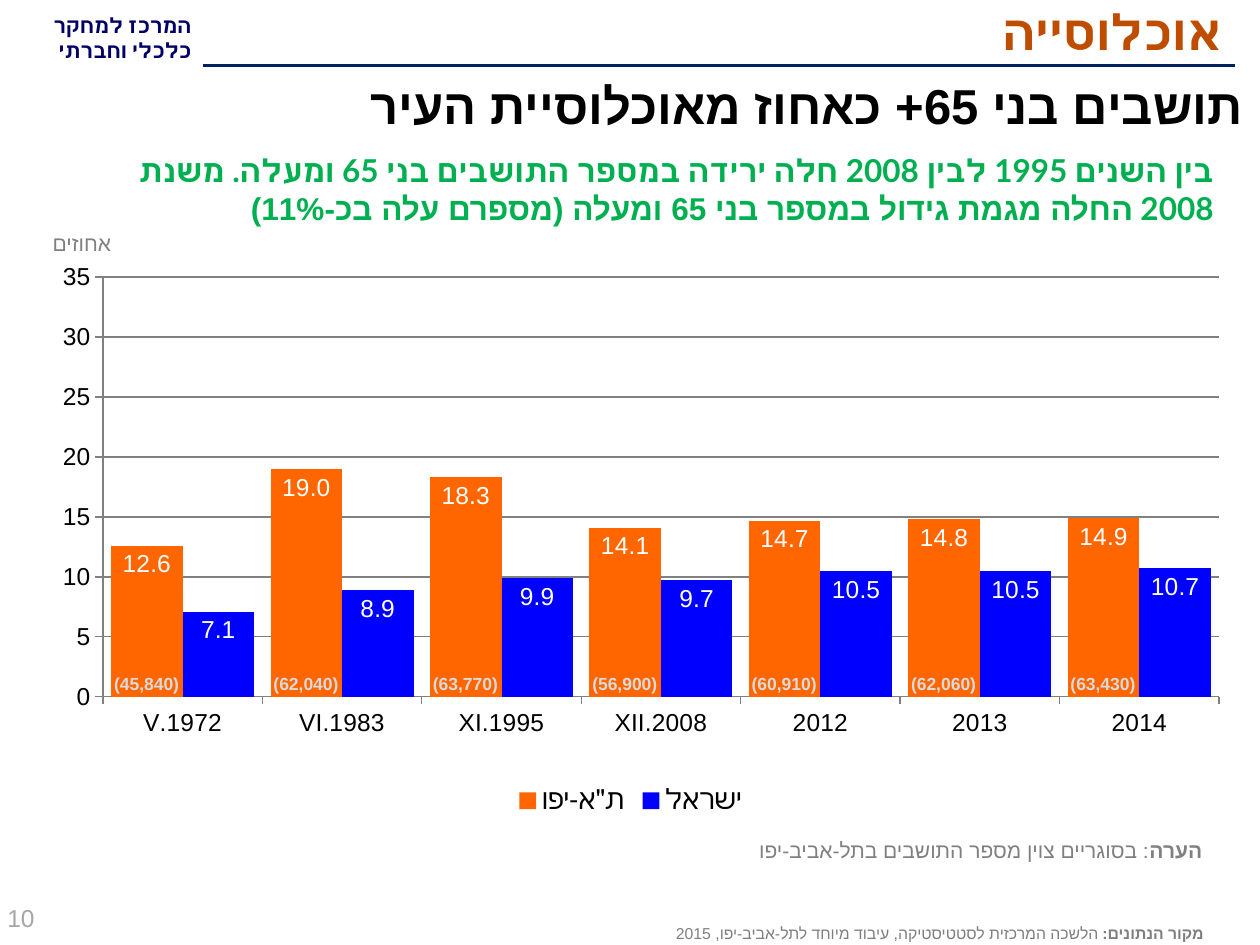
from lxml.etree import SubElement
from pptx import Presentation
from pptx.chart.data import CategoryChartData
from pptx.dml.color import RGBColor
from pptx.enum.chart import XL_CHART_TYPE as ChartType
from pptx.enum.chart import XL_LABEL_POSITION as LabelPosition
from pptx.enum.chart import XL_LEGEND_POSITION as LegendPosition
from pptx.enum.chart import XL_TICK_MARK as TickMark
from pptx.enum.shapes import MSO_CONNECTOR as Connector
from pptx.enum.text import MSO_ANCHOR as Anchor
from pptx.enum.text import MSO_AUTO_SIZE as AutoSize
from pptx.enum.text import PP_ALIGN as Align
from pptx.oxml.ns import qn
from pptx.util import Inches, Pt

BLACK = RGBColor(0x00, 0x00, 0x00)
WHITE = RGBColor(0xFF, 0xFF, 0xFF)
NAVY = RGBColor(0x00, 0x20, 0x60)
DEEP_BLUE = RGBColor(0x00, 0x00, 0x66)
RUST = RGBColor(0xBF, 0x4D, 0x00)
GREEN = RGBColor(0x00, 0xB0, 0x50)
ORANGE = RGBColor(0xFF, 0x66, 0x00)
BLUE = RGBColor(0x00, 0x00, 0xFF)
GRAY = RGBColor(0x80, 0x80, 0x80)
SOURCE_GRAY = RGBColor(0x7F, 0x7F, 0x7F)
NUMBER_GRAY = RGBColor(0xA6, 0xA6, 0xA6)
PALE_GRAY = RGBColor(0xD9, 0xD9, 0xD9)

PERIODS = ["V.1972", "VI.1983", "XI.1995", "XII.2008", "2012", "2013", "2014"]
RESIDENTS = ["(45,840)", "(62,040)", "(63,770)", "(56,900)",
             "(60,910)", "(62,060)", "(63,430)"]
SHARES = [
    ('ת"א-יפו', [12.6, 19.0, 18.3, 14.1, 14.7, 14.8, 14.9], ORANGE),
    ("ישראל", [7.1, 8.9, 9.9, 9.7, 10.5, 10.5, 10.7], BLUE),
]


def write_text(box, *paragraphs, size, color, align=Align.RIGHT, anchor=Anchor.TOP):
    frame = box.text_frame
    frame.word_wrap = True
    frame.auto_size = AutoSize.NONE
    frame.vertical_anchor = anchor
    for index, spans in enumerate(paragraphs):
        para = frame.add_paragraph() if index else frame.paragraphs[0]
        para.alignment = align
        para._p.get_or_add_pPr().set("rtl", "1")
        for text, font_name, bold in spans:
            span = para.add_run()
            span.text = text
            span.font.size = Pt(size)
            span.font.bold = bold
            span.font.color.rgb = color
            span.font.name = font_name
            SubElement(span.font._element, qn("a:cs"), typeface=font_name)


def add_text(page, left, top, width, height, *paragraphs, **text_format):
    box = page.shapes.add_textbox(Inches(left), Inches(top), Inches(width), Inches(height))
    write_text(box, *paragraphs, **text_format)


def add_title(page):
    title = page.shapes.title
    title.left, title.top = Inches(1.58), Inches(-0.03)
    title.width, title.height = Inches(8.22), Inches(0.55)
    write_text(title, [("אוכלוסייה", "Lato", True)], size=28, color=RUST,
               anchor=Anchor.MIDDLE)


def add_rule(page):
    rule = page.shapes.add_connector(
        Connector.STRAIGHT, Inches(9.8), Inches(0.52), Inches(1.61), Inches(0.52))
    rule.line.color.rgb = NAVY
    rule.line.width = Pt(2.25)
    SubElement(rule._element.spPr, qn("a:effectLst"))


def set_font(font, size, color=BLACK):
    font.name = "Arial"
    font.size = Pt(size)
    font.color.rgb = color


def place_plot(chart, x, y, width, height):
    plot_area = chart._chartSpace.chart.plotArea
    for old in plot_area.findall(qn("c:layout")):
        plot_area.remove(old)
    layout = SubElement(plot_area, qn("c:layout"))
    plot_area.insert(0, layout)
    manual = SubElement(layout, qn("c:manualLayout"))
    settings = [("layoutTarget", "inner"), ("xMode", "edge"), ("yMode", "edge"),
                ("x", x), ("y", y), ("w", width), ("h", height)]
    for name, value in settings:
        SubElement(manual, qn(f"c:{name}"), val=str(value))


def format_axes(chart):
    for axis in (chart.category_axis, chart.value_axis):
        axis.major_tick_mark = TickMark.OUTSIDE
        axis.minor_tick_mark = TickMark.NONE
        axis.format.line.color.rgb = GRAY
        set_font(axis.tick_labels.font, 14)
    scale = chart.value_axis
    scale.minimum_scale, scale.maximum_scale, scale.major_unit = 0, 35, 5
    scale.tick_labels.number_format = "0"
    scale.tick_labels.number_format_is_linked = False
    scale.has_major_gridlines = True
    scale.major_gridlines.format.line.color.rgb = GRAY


def add_share_chart(page):
    data = CategoryChartData(number_format="0.0")
    data.categories = PERIODS
    for name, values, _ in SHARES:
        data.add_series(name, values)
    chart = page.shapes.add_chart(
        ChartType.COLUMN_CLUSTERED, Inches(0.18), Inches(2.02),
        Inches(9.65), Inches(4.49), data).chart
    chart.has_title = False
    set_font(chart.font, 18)
    chart.has_legend = True
    chart.legend.position = LegendPosition.BOTTOM
    chart.legend.include_in_layout = False
    set_font(chart.legend.font, 16)
    format_axes(chart)
    place_plot(chart, 0.066, 0.04, 0.918, 0.742)

    plot = chart.plots[0]
    plot.gap_width = 23
    plot.overlap = 0
    plot.vary_by_categories = False
    for series, (_, _, color) in zip(plot.series, SHARES):
        series.format.fill.solid()
        series.format.fill.fore_color.rgb = color
        series.invert_if_negative = False
        labels = series.data_labels
        labels.show_value = True
        labels.position = LabelPosition.INSIDE_END
        labels.number_format = "0.0"
        labels.number_format_is_linked = False
        set_font(labels.font, 14, WHITE)


def main():
    deck = Presentation()
    deck.slide_width, deck.slide_height = Inches(10), Inches(7.5)
    page = deck.slides.add_slide(deck.slide_layouts[5])

    add_text(page, -0.15, 0.05, 1.77, 0.51,
             [("המרכז למחקר", "Lato", True)], [("כלכלי וחברתי", "Lato", True)],
             size=12, color=DEEP_BLUE)
    add_rule(page)
    add_title(page)
    add_share_chart(page)
    add_text(page, 0.91, 1.15, 8.82, 0.78,
             [("בין השנים 1995 לבין 2008 חלה ירידה במספר התושבים בני 65 ומעלה. משנת 2008 ה",
               "Lato", True),
              ("חלה מגמת גידול במספר בני 65 ומעלה (מספרם עלה בכ-11%)", "Arial", True)],
             size=18, color=GREEN)
    add_text(page, 2.17, 7.29, 7.48, 0.24,
             [("מקור הנתונים: ", "Arial", True),
              ("הלשכה המרכזית לסטטיסטיקה, עיבוד מיוחד לתל-אביב-יפו, 2015", "Arial", False)],
             size=9, color=SOURCE_GRAY, anchor=Anchor.MIDDLE)
    add_text(page, 0.25, 0.55, 9.71, 2.17,
             [("תושבים בני 65+ כאחוז מאוכלוסיית העיר", "Arial", True)],
             size=28, color=BLACK)
    for index, count in enumerate(RESIDENTS):
        add_text(page, 0.66 + 1.265 * index, 5.29, 0.86, 0.27,
                 [(count, "Arial", True)], size=10, color=PALE_GRAY)
    add_text(page, -0.04, 7.06, 2.33, 0.44, [("10", "Arial", False)],
             size=14, color=NUMBER_GRAY, align=Align.LEFT, anchor=Anchor.MIDDLE)
    add_text(page, -0.12, 1.78, 1.54, 0.3, [("אחוזים", "Arial", False)],
             size=12, color=GRAY, align=Align.CENTER)
    add_text(page, 5.85, 6.6, 3.79, 0.3,
             [("הערה", "Arial", True),
              (": בסוגריים צוין מספר התושבים בתל-אביב-יפו", "Arial", False)],
             size=12, color=GRAY)
    deck.save("out.pptx")


if __name__ == "__main__":
    main()
